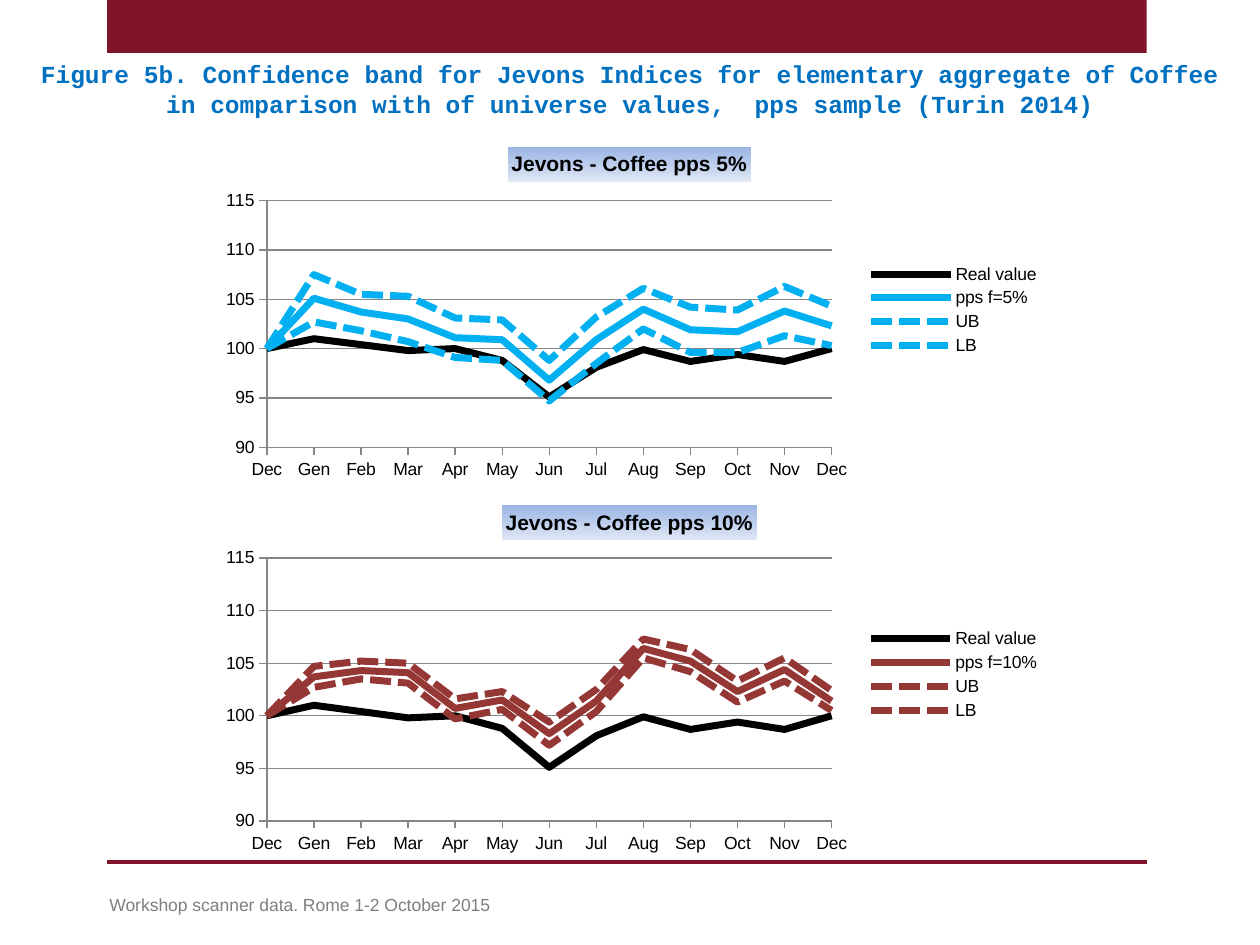
from dataclasses import dataclass

import lxml.etree
import pptx
import pptx.chart.data
import pptx.dml.color
import pptx.enum.chart
import pptx.enum.dml
import pptx.enum.shapes
import pptx.enum.text
import pptx.oxml.ns
import pptx.util

WIDTH, HEIGHT = pptx.util.Inches(10), pptx.util.Inches(7.5)
COLUMNS = ROWS = 100
MAROON, BLACK, GRID_GRAY = "7F142A", "000000", "868686"
MONTHS = ["Dec", "Gen", "Feb", "Mar", "Apr", "May", "Jun",
          "Jul", "Aug", "Sep", "Oct", "Nov", "Dec"]
REAL_VALUES = [100, 101, 100.4, 99.8, 100, 98.8, 95.1, 98.1, 99.9, 98.7, 99.4, 98.7, 100]


@dataclass
class Area:
    column: float
    row: float
    columns: float
    rows: float

    def place(self) -> tuple[int, int, int, int]:
        return (int(WIDTH * self.column / COLUMNS), int(HEIGHT * self.row / ROWS),
                int(WIDTH * self.columns / COLUMNS), int(HEIGHT * self.rows / ROWS))


@dataclass
class BandChart:
    area: Area
    percent: int
    color: str
    sample: list[float]
    upper: list[float]
    lower: list[float]
    plot: tuple[float, float, float, float]
    legend: tuple[float, float, float, float]


CHARTS = [
    BandChart(
        Area(16.5, 14.13, 66.9, 37.33), 5, "00B0F0",
        [100, 105.1, 103.7, 103, 101.1, 100.9, 96.8, 100.9, 104, 101.9, 101.7, 103.8, 102.3],
        [100, 102.7, 101.8, 100.7, 99.1, 98.8, 94.7, 98.5, 102, 99.6, 99.6, 101.3, 100.3],
        [100, 107.5, 105.5, 105.3, 103.1, 102.9, 98.8, 103.2, 106.1, 104.2, 103.9, 106.3, 104.3],
        (0.07, 0.19, 0.67, 0.7), (0.78, 0.36, 0.21, 0.28)),
    BandChart(
        Area(16.5, 52, 66.9, 39.2), 10, "953735",
        [100, 103.7, 104.3, 104.1, 100.7, 101.5, 98.3, 101.4, 106.4, 105.2, 102.3, 104.4, 101.4],
        [100, 102.7, 103.5, 103.1, 99.7, 100.6, 97.2, 100.4, 105.5, 104.2, 101.3, 103.3, 100.5],
        [100, 104.7, 105.2, 105, 101.6, 102.3, 99.4, 102.5, 107.3, 106.3, 103.3, 105.5, 102.4],
        (0.07, 0.18, 0.67, 0.71), (0.78, 0.36, 0.21, 0.27)),
]


def rgb(color: str) -> pptx.dml.color.RGBColor:
    return pptx.dml.color.RGBColor.from_string(color)


def style_font(font, name: str, size: float, color: str, bold: bool = False) -> None:
    font.name, font.size, font.bold = name, pptx.util.Pt(size), bold
    font.color.rgb = rgb(color)


def style_line(line, color: str, width: float) -> None:
    line.color.rgb = rgb(color)
    line.width = pptx.util.Pt(width)


def add_child(parent, tag: str, value=None):
    child = lxml.etree.SubElement(parent, pptx.oxml.ns.qn(tag))
    if value is not None:
        child.set("val", str(value))
    return child


def set_layout(element, shares: tuple[float, float, float, float], inner: bool) -> None:
    tag = pptx.oxml.ns.qn("c:layout")
    for old in element.findall(tag):
        element.remove(old)
    layout = lxml.etree.Element(tag)
    manual = add_child(layout, "c:manualLayout")
    if inner:
        add_child(manual, "c:layoutTarget", "inner")
    for mode in ("c:xMode", "c:yMode"):
        add_child(manual, mode, "edge")
    for name, share in zip(("c:x", "c:y", "c:w", "c:h"), shares):
        add_child(manual, name, share)
    element.insert(0 if inner else 1, layout)


def add_title(slide, area: Area, text: str) -> None:
    title = slide.shapes.title
    title.left, title.top, title.width, title.height = area.place()
    frame = title.text_frame
    frame.text = text
    frame.word_wrap = True
    frame.auto_size = pptx.enum.text.MSO_AUTO_SIZE.NONE
    frame.vertical_anchor = pptx.enum.text.MSO_ANCHOR.TOP
    frame.margin_left, frame.margin_right = pptx.util.Inches(0.04), pptx.util.Inches(0.16)
    para = frame.paragraphs[0]
    para.alignment = pptx.enum.text.PP_ALIGN.CENTER
    style_font(para.runs[0].font, "Courier New", 14, "0070C0", True)


def add_footer(slide, area: Area, text: str) -> None:
    box = slide.shapes.add_textbox(*area.place())
    box.text_frame.word_wrap = True
    box.text_frame.text = text
    style_font(box.text_frame.paragraphs[0].runs[0].font, "Arial", 10, "7F7F7F")


def add_frame(slide, band: Area, rule_row: float) -> None:
    shape = slide.shapes.add_shape(pptx.enum.shapes.MSO_SHAPE.RECTANGLE, *band.place())
    shape.shadow.inherit = False
    shape.fill.solid()
    shape.fill.fore_color.rgb = rgb(MAROON)
    shape.line.fill.background()
    left, top, width, _ = Area(band.column, rule_row, band.columns, 0).place()
    rule = slide.shapes.add_connector(
        pptx.enum.shapes.MSO_CONNECTOR.STRAIGHT, left, top, left + width, top)
    style_line(rule.line, MAROON, 2)
    add_child(rule._element.spPr, "a:effectLst")


def style_axes(chart) -> None:
    axis = chart.value_axis
    axis.minimum_scale, axis.maximum_scale, axis.major_unit = 90, 115, 5
    axis.tick_labels.number_format = "0"
    axis.tick_labels.number_format_is_linked = False
    axis.has_major_gridlines = True
    style_line(axis.major_gridlines.format.line, GRID_GRAY, 0.75)
    for each in (axis, chart.category_axis):
        each.major_tick_mark = pptx.enum.chart.XL_TICK_MARK.OUTSIDE
        each.minor_tick_mark = pptx.enum.chart.XL_TICK_MARK.NONE
        style_line(each.format.line, GRID_GRAY, 0.75)
    tag = pptx.oxml.ns.qn("c:crossBetween")
    crossing = axis._element.find(tag)
    if crossing is None:
        crossing = lxml.etree.Element(tag)
        axis._element.find(pptx.oxml.ns.qn("c:crosses")).addnext(crossing)
    crossing.set("val", "midCat")


def style_chart_title(chart, text: str) -> None:
    chart.has_title = True
    title = chart.chart_title
    title.include_in_layout = False
    title.text_frame.text = text
    style_font(title.text_frame.paragraphs[0].runs[0].font, "Arial", 12, BLACK, True)
    fill = title.format.fill
    fill.gradient()
    fill.gradient_angle = 270
    for stop, color in zip(fill.gradient_stops, ("9AB5E4", "E1E8F5")):
        stop.color.rgb = rgb(color)


def add_band_chart(slide, band: BandChart) -> None:
    data = pptx.chart.data.CategoryChartData(number_format="0.0")
    data.categories = MONTHS
    rows = [("Real value", REAL_VALUES, BLACK, False),
            (f"pps f={band.percent}%", band.sample, band.color, False),
            ("UB", band.upper, band.color, True),
            ("LB", band.lower, band.color, True)]
    for name, values, _, _ in rows:
        data.add_series(name, values)
    chart = slide.shapes.add_chart(
        pptx.enum.chart.XL_CHART_TYPE.LINE, *band.area.place(), data).chart
    style_font(chart.font, "Arial", 10, BLACK)
    style_chart_title(chart, f"Jevons - Coffee pps {band.percent}%")
    style_axes(chart)
    chart.plots[0].vary_by_categories = False
    for series, (_, _, color, dashed) in zip(chart.plots[0].series, rows):
        series.smooth = False
        style_line(series.format.line, color, 4)
        if dashed:
            series.format.line.dash_style = pptx.enum.dml.MSO_LINE.SQUARE_DOT
            dash = series._element.find(".//" + pptx.oxml.ns.qn("a:prstDash"))
            dash.set("val", "sysDash")
    chart.has_legend = True
    chart.legend.position = pptx.enum.chart.XL_LEGEND_POSITION.RIGHT
    chart.legend.include_in_layout = False
    set_layout(chart.legend._element, band.legend, False)
    set_layout(chart._chartSpace.chart.plotArea, band.plot, True)


def main() -> None:
    deck = pptx.Presentation()
    deck.slide_width, deck.slide_height = WIDTH, HEIGHT
    slide = deck.slides.add_slide(deck.slide_layouts[5])
    add_frame(slide, Area(8.5, 0, 82.5, 5.6), 91.2)
    add_title(slide, Area(2.3, 5.6, 96.7, 7.6),
              "Figure 5b. Confidence band for Jevons Indices for elementary aggregate of Coffee "
              "in comparison with of universe values,  pps sample (Turin 2014)")
    add_footer(slide, Area(7.7, 94, 66.9, 3.6),
               "Workshop scanner data. Rome 1-2 October 2015")
    for band in CHARTS:
        add_band_chart(slide, band)
    deck.save("out.pptx")


if __name__ == "__main__":
    main()
